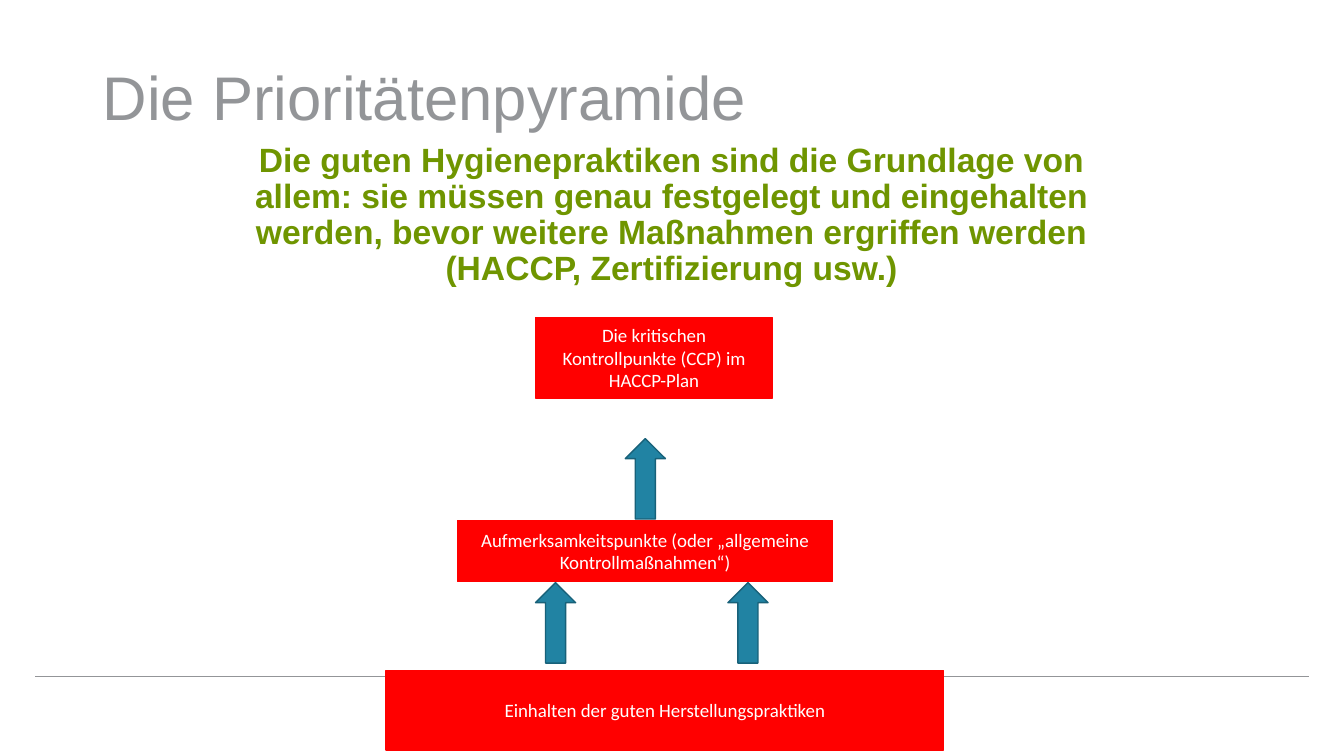
import pptx
import pptx.util
import pptx.dml.color
import pptx.enum.shapes
import pptx.enum.text
import pptx.oxml.ns
import lxml.etree

Pt = pptx.util.Pt
Shape = pptx.enum.shapes.MSO_SHAPE
Align = pptx.enum.text.PP_ALIGN
Anchor = pptx.enum.text.MSO_ANCHOR

COLORS = {
    "gray": "939598",
    "green": "6F9500",
    "red": "FF0000",
    "white": "FFFFFF",
    "teal": "2183A3",
    "edge": "186179",
}

# Left, top, width, height in percent of the pyramid's box
STEPS = [
    ((0, 81.6, 100, 18.4), "Einhalten der guten Herstellungspraktiken"),
    ((12.8, 46.9, 67.3, 14.2),
     "Aufmerksamkeitspunkte (oder „allgemeine Kontrollmaßnahmen“)"),
    ((26.8, 0, 42.5, 18.6),
     "Die kritischen Kontrollpunkte (CCP) im HACCP-Plan"),
]
ARROWS = [(26.8, 61.3), (61.3, 61.3), (42.9, 28)]
ARROW_SIZE = (7.2, 18.6)


def color(name):
    return pptx.dml.color.RGBColor.from_string(COLORS[name])


def part(box, share):
    """Return the part of a box that is given in percent of it."""
    left, top, width, height = box
    x, y, w, h = share
    return (int(left + width * x / 100), int(top + height * y / 100),
            int(width * w / 100), int(height * h / 100))


def write(shape, text, font, size, tint, align, anchor, bold=False):
    frame = shape.text_frame
    frame.word_wrap = True
    frame.vertical_anchor = anchor
    para = frame.paragraphs[0]
    para.text = text
    para.alignment = align
    para.font.name = font
    para.font.size = Pt(size)
    para.font.bold = bold
    para.font.color.rgb = color(tint)
    return para


def add_block(slide, kind, box, fill, edge):
    block = slide.shapes.add_shape(kind, *box)
    block.shadow.inherit = False
    block.fill.solid()
    block.fill.fore_color.rgb = color(fill)
    block.line.color.rgb = color(edge)
    block.line.width = Pt(1)
    return block


def add_rule(slide, box):
    left, top, width, _ = box
    rule = slide.shapes.add_connector(
        pptx.enum.shapes.MSO_CONNECTOR.STRAIGHT, left, top, left + width, top)
    rule.line.color.rgb = color("gray")
    rule.line.width = Pt(1)
    lxml.etree.SubElement(rule._element.spPr,
                          pptx.oxml.ns.qn("a:effectLst"))


def add_title(slide, box):
    title = slide.shapes.add_textbox(*box)
    para = write(title, "Die Prioritätenpyramide", "Arial", 44, "gray",
                 Align.LEFT, Anchor.MIDDLE)
    para.line_spacing = 0.9


def add_lead(slide, box):
    lead = slide.shapes.add_textbox(*box)
    para = write(
        lead,
        "Die guten Hygienepraktiken sind die Grundlage von allem: sie müssen "
        "genau festgelegt und eingehalten werden, bevor weitere Maßnahmen "
        "ergriffen werden (HACCP, Zertifizierung usw.)",
        "Arial", 24, "green", Align.CENTER, Anchor.TOP, bold=True)
    para.line_spacing = 0.9


def add_pyramid(slide, box):
    for share, text in STEPS:
        step = add_block(slide, Shape.RECTANGLE, part(box, share),
                         "red", "red")
        write(step, text, "Calibri", 13.5, "white",
              Align.CENTER, Anchor.MIDDLE)
    for spot in ARROWS:
        add_block(slide, Shape.UP_ARROW, part(box, spot + ARROW_SIZE),
                  "teal", "edge")


def main():
    deck = pptx.Presentation()
    deck.slide_width = pptx.util.Inches(13.33)
    deck.slide_height = pptx.util.Inches(7.5)
    slide = deck.slides.add_slide(deck.slide_layouts[6])
    page = (0, 0, deck.slide_width, deck.slide_height)
    add_rule(slide, part(page, (2.63, 89.47, 94.75, 0)))
    add_title(slide, part(page, (6.9, 5.33, 86.27, 15.87)))
    add_lead(slide, part(page, (17.63, 18.27, 64.67, 60.53)))
    add_pyramid(slide, part(page, (28.73, 42, 41.48, 57.2)))
    deck.save("out.pptx")


if __name__ == "__main__":
    main()
